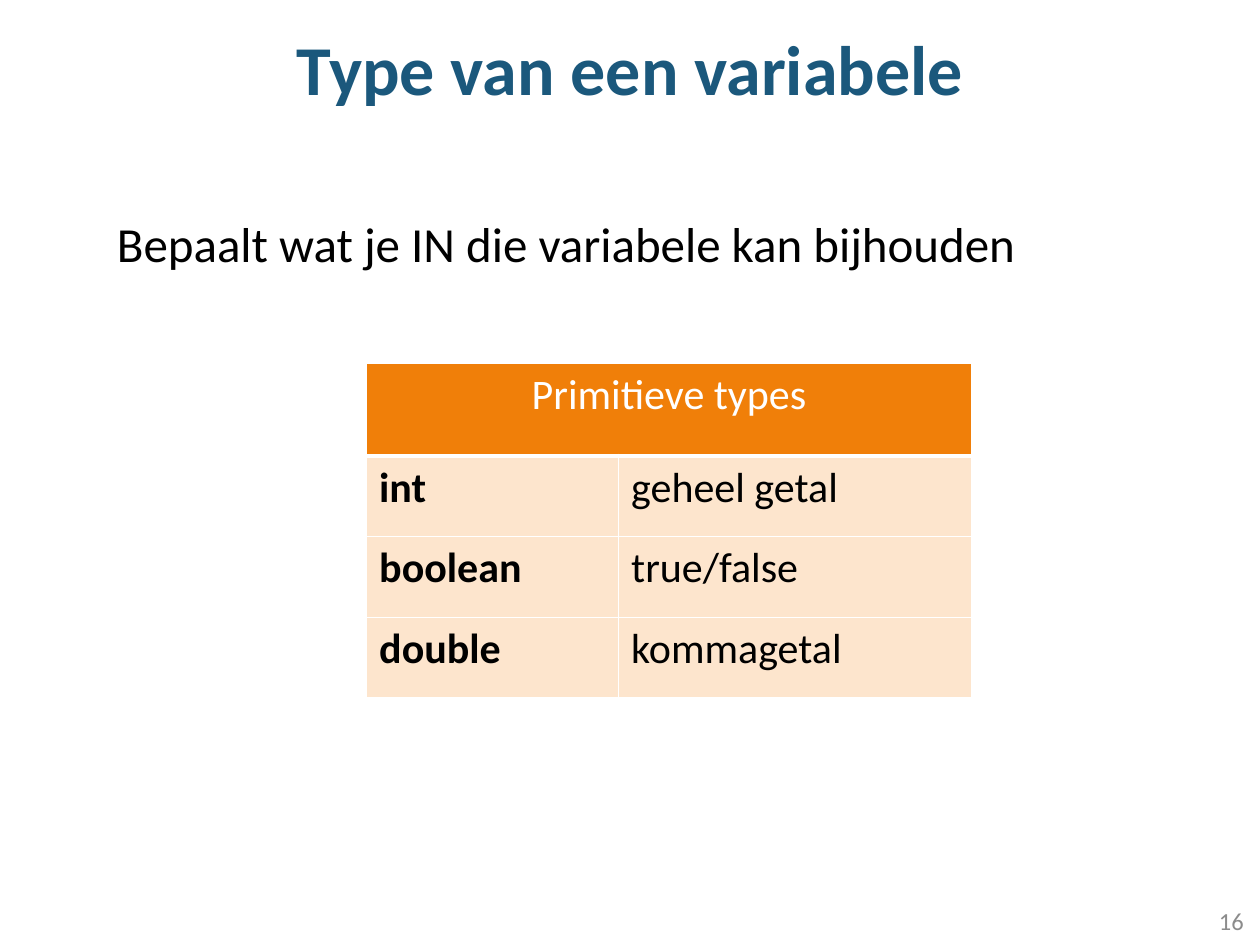
from lxml import etree
from pptx import Presentation
from pptx.dml.color import RGBColor
from pptx.enum.text import MSO_ANCHOR, PP_ALIGN
from pptx.oxml.ns import qn
from pptx.util import Inches, Pt

LEFT, CENTER, RIGHT = PP_ALIGN.LEFT, PP_ALIGN.CENTER, PP_ALIGN.RIGHT
TOP, MIDDLE = MSO_ANCHOR.TOP, MSO_ANCHOR.MIDDLE

BLUE = RGBColor(0x1B, 0x58, 0x7C)
ORANGE = RGBColor(0xF0, 0x7F, 0x09)
PEACH = RGBColor(0xFD, 0xE5, 0xCD)
GRAY = RGBColor(0x8C, 0x8C, 0x8C)
BLACK = RGBColor(0, 0, 0)
WHITE = RGBColor(0xFF, 0xFF, 0xFF)

COLUMNS, ROWS = 100, 75
BLANK_LAYOUT = 6

PRIMITIVE_TYPES = [
    ("int", "geheel getal"),
    ("boolean", "true/false"),
    ("double", "kommagetal"),
]


class SlideBuilder:
    """Holds the style and the slide; lengths are grid columns and rows."""

    font = "Calibri"
    table_size = 24
    line_spacing = 0.9

    def __init__(self, presentation):
        self.slide = presentation.slides.add_slide(
            presentation.slide_layouts[BLANK_LAYOUT])
        self.column = presentation.slide_width / COLUMNS
        self.row = presentation.slide_height / ROWS

    def across(self, columns):
        return round(columns * self.column)

    def down(self, rows):
        return round(rows * self.row)

    def box(self, left, top, width, height):
        return (self.across(left), self.down(top),
                self.across(width), self.down(height))

    def add_text_run(self, paragraph, text, size, color, bold=False,
                     align=LEFT):
        paragraph.alignment = align
        run = paragraph.add_run()
        run.text = text
        run.font.name = self.font
        run.font.size = Pt(size)
        run.font.bold = bold
        run.font.color.rgb = color

    def text(self, area, text, size, color, bold=False, align=LEFT,
             anchor=TOP, spacing=None, before=None):
        frame = self.slide.shapes.add_textbox(*self.box(*area)).text_frame
        frame.word_wrap = True
        frame.vertical_anchor = anchor
        paragraph = frame.paragraphs[0]
        paragraph.line_spacing = spacing
        if before is not None:
            paragraph.space_before = Pt(before)
        self.add_text_run(paragraph, text, size, color, bold, align)

    def borders(self, cell, bottom_width):
        properties = cell._tc.get_or_add_tcPr()
        widths = {"a:lnL": 1, "a:lnR": 1, "a:lnT": 1, "a:lnB": bottom_width}
        for side, width in widths.items():
            line = etree.SubElement(properties, qn(side), w=str(int(Pt(width))))
            fill = etree.SubElement(line, qn("a:solidFill"))
            etree.SubElement(fill, qn("a:srgbClr"), val=str(WHITE))

    def cell(self, cell, text, fill, color, bold=False, align=LEFT,
             bottom_width=1):
        self.borders(cell, bottom_width)
        cell.fill.solid()
        cell.fill.fore_color.rgb = fill
        self.add_text_run(cell.text_frame.paragraphs[0], text,
                          self.table_size, color, bold, align)

    def table(self, left, top, widths, header_height, row_height, header, rows):
        """Draw a table whose header spans both columns."""
        heights = [header_height] + [row_height] * len(rows)
        table = self.slide.shapes.add_table(
            len(heights), len(widths),
            *self.box(left, top, sum(widths), sum(heights))).table
        for column, width in zip(table.columns, widths):
            column.width = self.across(width)
        for row, height in zip(table.rows, heights):
            row.height = self.down(height)
        table.cell(0, 0).merge(table.cell(0, len(widths) - 1))
        self.cell(table.cell(0, 0), header, ORANGE, WHITE,
                  align=CENTER, bottom_width=3)
        for index, (name, meaning) in enumerate(rows, start=1):
            self.cell(table.cell(index, 0), name, PEACH, BLACK, bold=True)
            self.cell(table.cell(index, 1), meaning, PEACH, BLACK)


def main():
    presentation = Presentation()
    presentation.slide_width = Inches(10)
    presentation.slide_height = Inches(7.5)
    builder = SlideBuilder(presentation)

    builder.table(29.1, 28.8, (20, 28), 7.4, 6.4,
                  "Primitieve types", PRIMITIVE_TYPES)
    builder.text((0, 0, COLUMNS, 11.5), "Type van een variabele", 40, BLUE,
                 bold=True, align=CENTER, anchor=MIDDLE,
                 spacing=builder.line_spacing)
    builder.text((8.3, 17, 86.6, 7.9),
                 "Bepaalt wat je IN die variabele kan bijhouden", 28, BLACK,
                 spacing=builder.line_spacing, before=7.5)
    builder.text((77.2, 71.1, 22.5, 4), "16", 14, GRAY,
                 align=RIGHT, anchor=MIDDLE)

    presentation.save("out.pptx")


if __name__ == "__main__":
    main()
